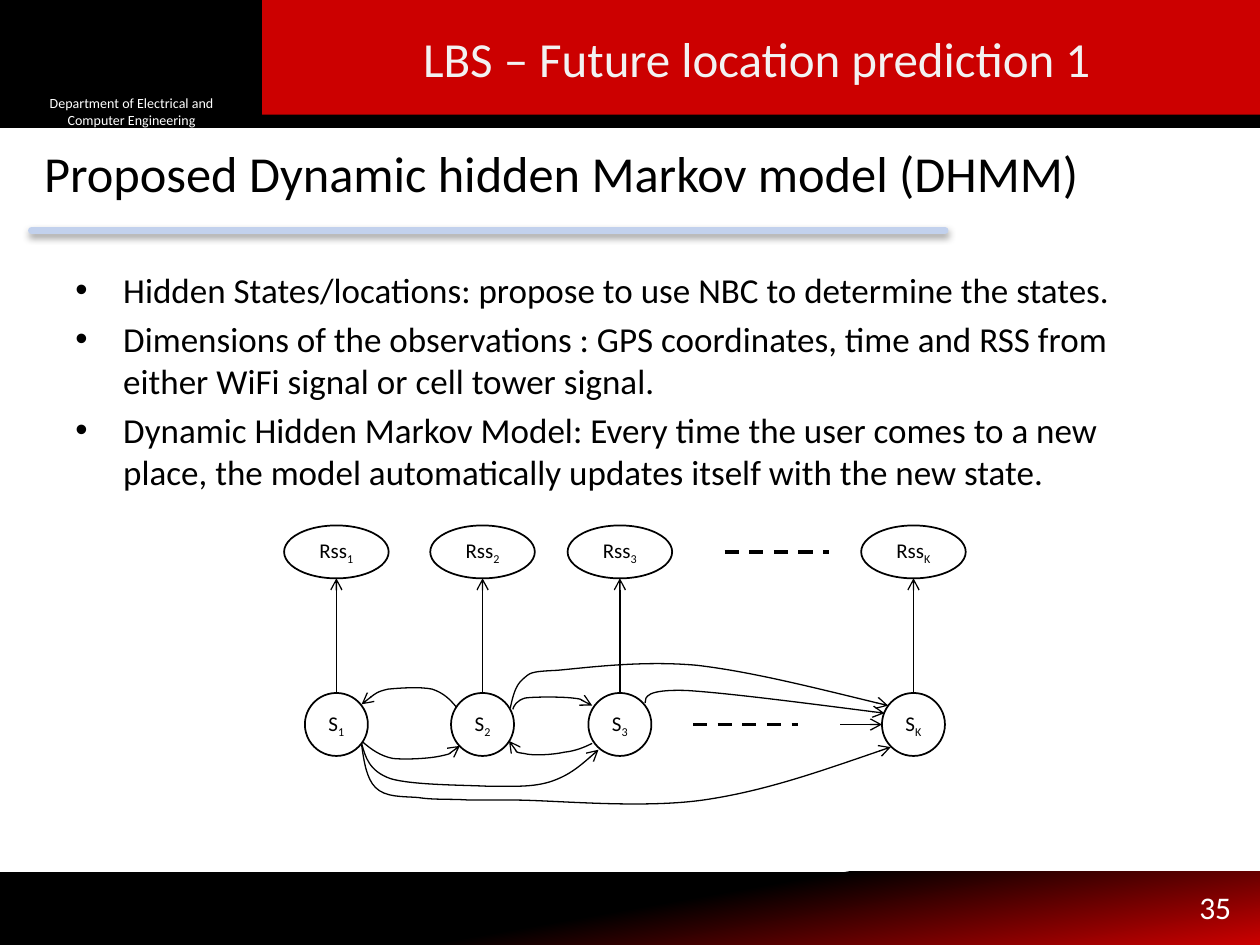
from dataclasses import dataclass

from lxml.etree import SubElement
from pptx import Presentation
from pptx.dml.color import RGBColor
from pptx.enum.dml import MSO_LINE
from pptx.enum.shapes import MSO_CONNECTOR, MSO_SHAPE
from pptx.enum.text import MSO_ANCHOR, MSO_AUTO_SIZE, PP_ALIGN
from pptx.oxml.ns import qn
from pptx.util import Inches, Pt

RECT, OVAL = MSO_SHAPE.RECTANGLE, MSO_SHAPE.OVAL
STRAIGHT, DASH = MSO_CONNECTOR.STRAIGHT, MSO_LINE.DASH
TOP, MIDDLE = MSO_ANCHOR.TOP, MSO_ANCHOR.MIDDLE
LEFT, CENTER = PP_ALIGN.LEFT, PP_ALIGN.CENTER
FIXED = MSO_AUTO_SIZE.NONE

BLACK = RGBColor(0x00, 0x00, 0x00)
WHITE = RGBColor(0xFF, 0xFF, 0xFF)
PALE = RGBColor(0xF2, 0xF2, 0xF2)
RED = RGBColor(0xCC, 0x00, 0x00)
BLUE = RGBColor(0xC2, 0xD1, 0xED)

FONT = "Calibri"
INDENT = 0.38
STATE_Y, STATE_D = 5.5, 0.5
RSS_Y, RSS_W, RSS_H = 4.17, 0.83, 0.42

Point = tuple[float, float]


@dataclass
class Stage:
    sub: str
    x: float


@dataclass
class Dash:
    x: float
    y: float
    width: float = 0.83


STAGES = [Stage("1", 2.67), Stage("2", 3.83), Stage("3", 4.92), Stage("K", 7.25)]
DASHES = [Dash(5.5, 5.75), Dash(5.75, 4.38)]

POINTS = [
    "Hidden States/locations: propose to use NBC to determine the states.",
    "Dimensions of the observations : GPS coordinates, time and RSS from "
    "either WiFi signal or cell tower signal.",
    "Dynamic Hidden Markov Model: Every time the user comes to a new place, "
    "the model automatically updates itself with the new state.",
]

# Each curve is a start point, then two handles and an end point per bend.
CURVES: list[list[Point]] = [
    [(2.88, 5.89), (2.95, 5.95), (3.02, 6), (3.12, 6.02), (3.23, 6.03),
     (3.41, 6.02), (3.5, 6), (3.59, 5.98), (3.62, 5.95), (3.65, 5.92)],
    [(3.62, 5.61), (3.57, 5.55), (3.52, 5.5), (3.43, 5.47), (3.34, 5.45),
     (3.18, 5.46), (3.08, 5.47), (2.99, 5.49), (2.93, 5.54), (2.87, 5.59)],
    [(2.87, 5.9), (2.9, 6.01), (2.93, 6.12), (3.1, 6.18), (3.27, 6.23),
     (3.65, 6.23), (3.87, 6.24), (4.08, 6.24), (4.23, 6.25), (4.38, 6.2),
     (4.52, 6.15), (4.64, 6.05), (4.75, 5.95)],
    [(2.87, 5.91), (2.89, 6.05), (2.91, 6.18), (2.98, 6.25), (3.06, 6.33),
     (3.19, 6.32), (3.32, 6.33), (3.44, 6.35), (3.59, 6.34), (3.72, 6.35),
     (3.84, 6.35), (4.08, 6.35), (4.08, 6.35), (4.39, 6.35), (5.08, 6.42),
     (5.58, 6.35), (6.07, 6.28), (6.57, 6.1), (7.07, 5.93)],
    [(4.07, 5.63), (4.08, 5.6), (4.1, 5.56), (4.17, 5.54), (4.25, 5.53),
     (4.45, 5.53), (4.54, 5.54), (4.63, 5.55), (4.66, 5.58), (4.7, 5.6)],
    [(4.05, 5.62), (4.07, 5.53), (4.09, 5.44), (4.15, 5.39), (4.21, 5.34),
     (4.2, 5.33), (4.42, 5.32), (4.65, 5.3), (5.09, 5.24), (5.53, 5.28),
     (5.96, 5.33), (6.51, 5.47), (7.05, 5.6)],
    [(5.12, 5.58), (5.12, 5.53), (5.13, 5.47), (5.45, 5.48), (5.77, 5.5),
     (6.39, 5.58), (7.02, 5.66)],
    [(4.7, 5.9), (4.64, 5.93), (4.57, 5.96), (4.48, 5.97), (4.39, 5.99),
     (4.23, 6), (4.16, 5.98), (4.08, 5.97), (4.06, 5.92), (4.04, 5.88)],
]


def apply(item, **formats) -> None:
    for key, value in formats.items():
        setattr(item, key, value)


def ink(font, size: float, color: RGBColor) -> None:
    apply(font, name=FONT, size=Pt(size))
    font.color.rgb = color


def pen(line, width: float, color: RGBColor = BLACK) -> None:
    line.width = Pt(width)
    line.color.rgb = color


def tip(line) -> None:
    """Put an open arrowhead at the end of a line."""
    SubElement(line._get_or_add_ln(), qn("a:tailEnd"), type="arrow")


def write(shape, text: str, size: float, color: RGBColor,
          anchor=TOP, align=LEFT):
    frame = shape.text_frame
    apply(frame, word_wrap=True, auto_size=FIXED, vertical_anchor=anchor)
    para = frame.paragraphs[0]
    para.text, para.alignment = text, align
    ink(para.font, size, color)
    return frame


def add_box(shapes, kind, *at: float, fill: RGBColor | None = None):
    """Add a preset shape with no outline; no fill colour leaves it clear."""
    shape = shapes.add_shape(kind, *map(Inches, at))
    shape.shadow.inherit = False
    shape.line.fill.background()
    if fill is None:
        shape.fill.background()
    else:
        shape.fill.solid()
        shape.fill.fore_color.rgb = fill
    return shape


def add_node(shapes, name: str, sub: str, *at: float):
    node = add_box(shapes, OVAL, *at)
    pen(node.line, 1)
    frame = write(node, name, 12, BLACK, MIDDLE, CENTER)
    apply(frame, word_wrap=False, margin_left=0, margin_right=0,
          margin_top=0, margin_bottom=0)
    run = frame.paragraphs[0].add_run()
    run.text = sub
    run._r.get_or_add_rPr().set("baseline", "-25000")
    return node


def add_line(shapes, start: Point, end: Point, width: float,
             color: RGBColor = BLACK):
    """Add a straight line; return it with its empty effect list."""
    line = shapes.add_connector(STRAIGHT, *map(Inches, start + end))
    pen(line.line, width, color)
    return line, SubElement(line._element.spPr, qn("a:effectLst"))


def add_curve(shapes, points: list[Point]) -> None:
    spots = [(Inches(x), Inches(y)) for x, y in points]
    maker = shapes.build_freeform(*spots[0])
    maker.add_line_segments(spots[1:], close=False)
    curve = maker.convert_to_shape()
    curve.shadow.inherit = False
    curve.fill.background()
    pen(curve.line, 0.75)
    tip(curve.line)
    legs = list(curve._element.iter(qn("a:lnTo")))
    for first in range(0, len(legs), 3):
        bend = SubElement(legs[first].getparent(), qn("a:cubicBezTo"))
        for leg in legs[first:first + 3]:
            bend.append(leg[0])
            leg.getparent().remove(leg)


def add_frame(shapes) -> None:
    """Draw the bands, the department name, the rule and the page number."""
    foot = add_box(shapes, RECT, 0, 6.92, 10, 0.58)
    foot.fill.gradient()
    foot.fill.gradient_angle = 280
    for stop, place, color in zip(foot.fill.gradient_stops, (0.5, 1), (BLACK, RED)):
        stop.position, stop.color.rgb = place, color
    head = add_box(shapes, RECT, 0, 0, 10, 1, fill=BLACK)
    pen(head.line, 2)
    add_box(shapes, RECT, 2.08, -0.01, 7.92, 0.92, fill=RED)
    dept = add_box(shapes, RECT, 0.17, 0.76, 1.75, 0.25, fill=BLACK)
    write(dept, "Department of Electrical and Computer Engineering", 8, WHITE,
          MIDDLE, CENTER)
    rule, effects = add_line(shapes, (0.25, 1.83), (7.5, 1.83), 4, BLUE)
    rule.line._get_or_add_ln().set("cap", "rnd")
    shade = SubElement(effects, qn("a:outerShdw"), blurRad=str(Pt(4)),
                       dist=str(Pt(2)), dir=str(85 * 60000))
    tone = SubElement(shade, qn("a:srgbClr"), val=str(BLACK))
    SubElement(tone, qn("a:alpha"), val="40000")
    page = shapes.add_textbox(*map(Inches, (9.42, 7, 0.5, 0.4)))
    write(page, "35", 18, WHITE)


def add_points(shapes) -> None:
    body = shapes.add_textbox(*map(Inches, (0.5, 2.08, 9, 4.58)))
    frame = body.text_frame
    apply(frame, word_wrap=True, auto_size=FIXED)
    for rank, text in enumerate(POINTS):
        para = frame.add_paragraph() if rank else frame.paragraphs[0]
        props = para._p.get_or_add_pPr()
        props.set("marL", str(Inches(INDENT)))
        props.set("indent", str(-Inches(INDENT)))
        SubElement(props, qn("a:buFont"), typeface="Arial")
        SubElement(props, qn("a:buChar"), char="•")
        apply(para, text=text, space_before=Pt(4 if rank else 0))
        ink(para.font, 20, BLACK)


def add_model(shapes) -> None:
    for stage in STAGES:
        state = add_node(shapes, "S", stage.sub, stage.x - STATE_D / 2,
                         STATE_Y, STATE_D, STATE_D)
        add_node(shapes, "Rss", stage.sub, stage.x - RSS_W / 2,
                 RSS_Y, RSS_W, RSS_H)
        arrow, _ = add_line(shapes, (stage.x, STATE_Y),
                            (stage.x, RSS_Y + RSS_H), 0.75)
        arrow.begin_connect(state, 0)
        tip(arrow.line)
    entry, _ = add_line(shapes, (6.67, 5.75), (7, 5.75), 0.75)
    tip(entry.line)
    for curve in CURVES:
        add_curve(shapes, curve)
    for dash in DASHES:
        gap, _ = add_line(shapes, (dash.x, dash.y), (dash.x + dash.width, dash.y), 2)
        gap.line.dash_style = DASH


def main() -> None:
    deck = Presentation()
    apply(deck, slide_width=Inches(10), slide_height=Inches(7.5))
    slide = deck.slides.add_slide(deck.slide_layouts[5])
    shapes = slide.shapes
    add_frame(shapes)
    title = shapes.title
    apply(title, left=Inches(0.25), top=Inches(1.08),
          width=Inches(9.33), height=Inches(0.83))
    write(title, "Proposed Dynamic hidden Markov model (DHMM)", 28.8, BLACK)
    topic = shapes.add_textbox(*map(Inches, (2.42, 0.17, 7.17, 0.58)))
    write(topic, "LBS – Future location prediction 1", 28, PALE, MIDDLE, CENTER)
    add_points(shapes)
    add_model(shapes)
    deck.save("out.pptx")


if __name__ == "__main__":
    main()
